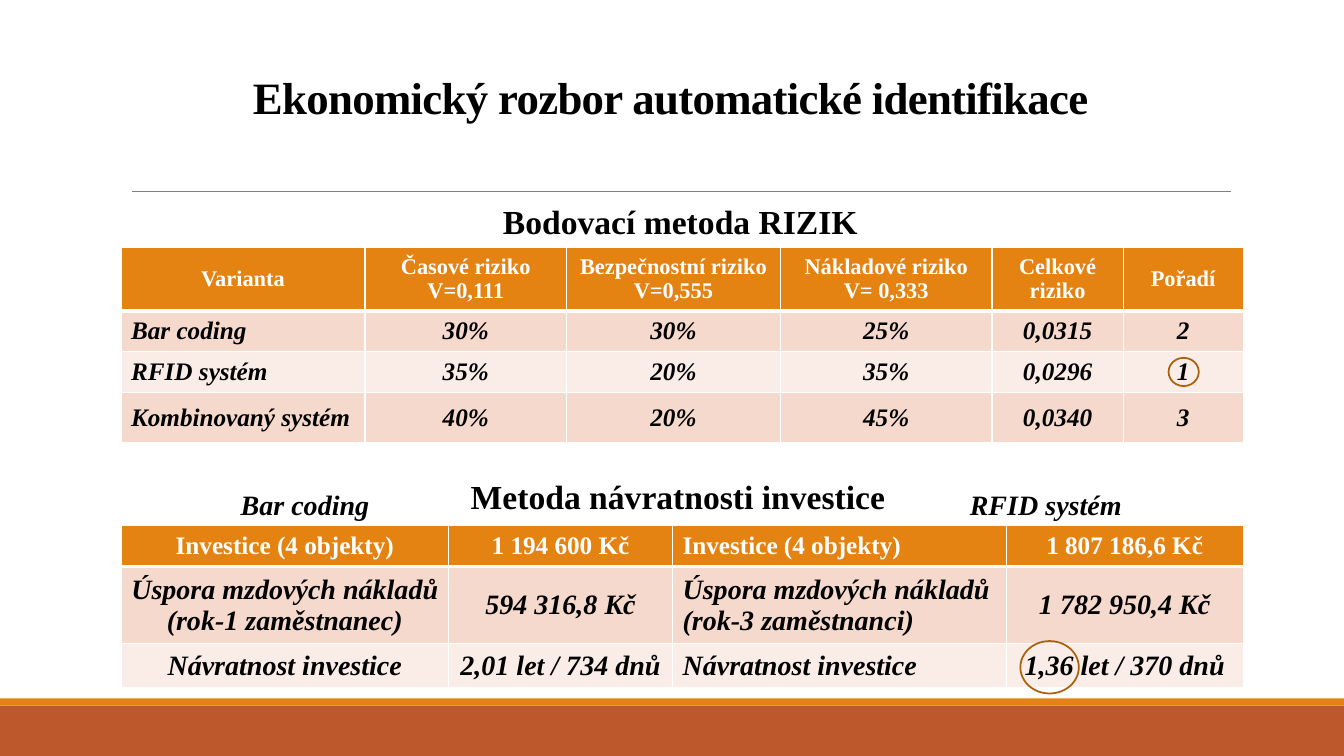
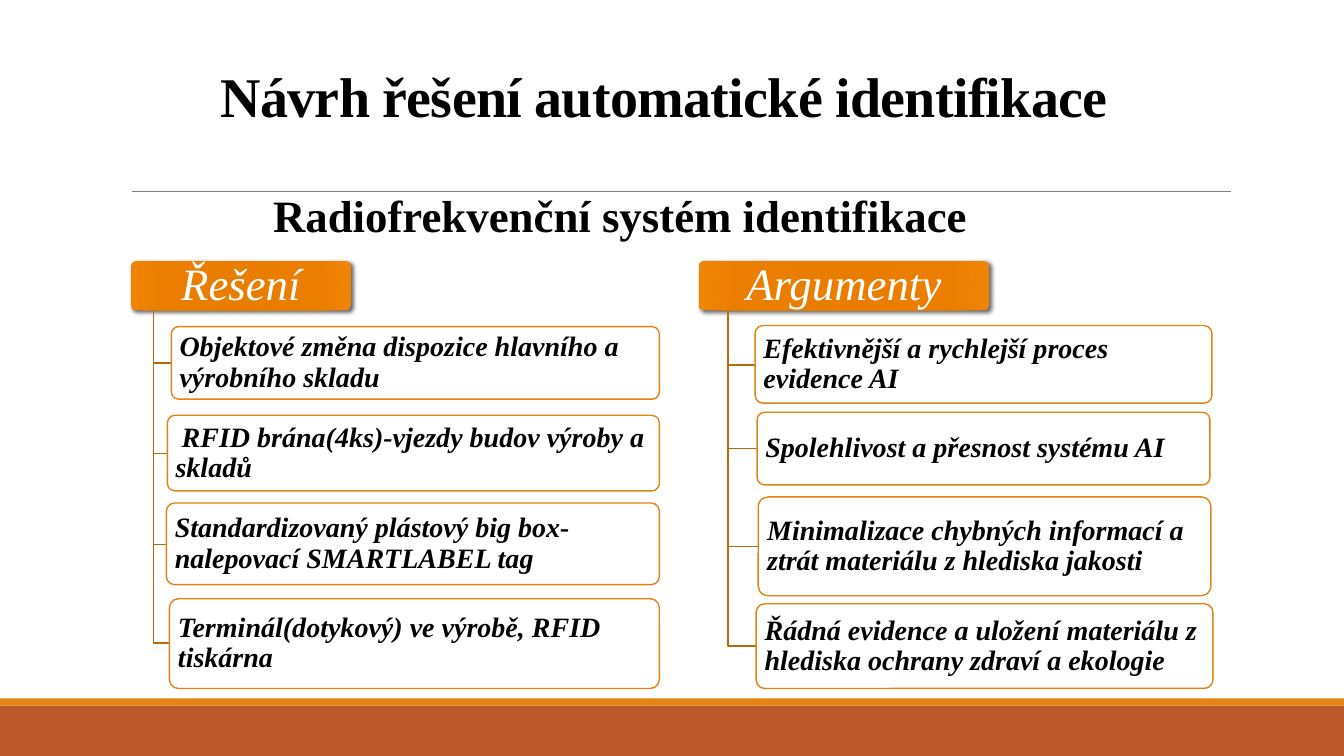
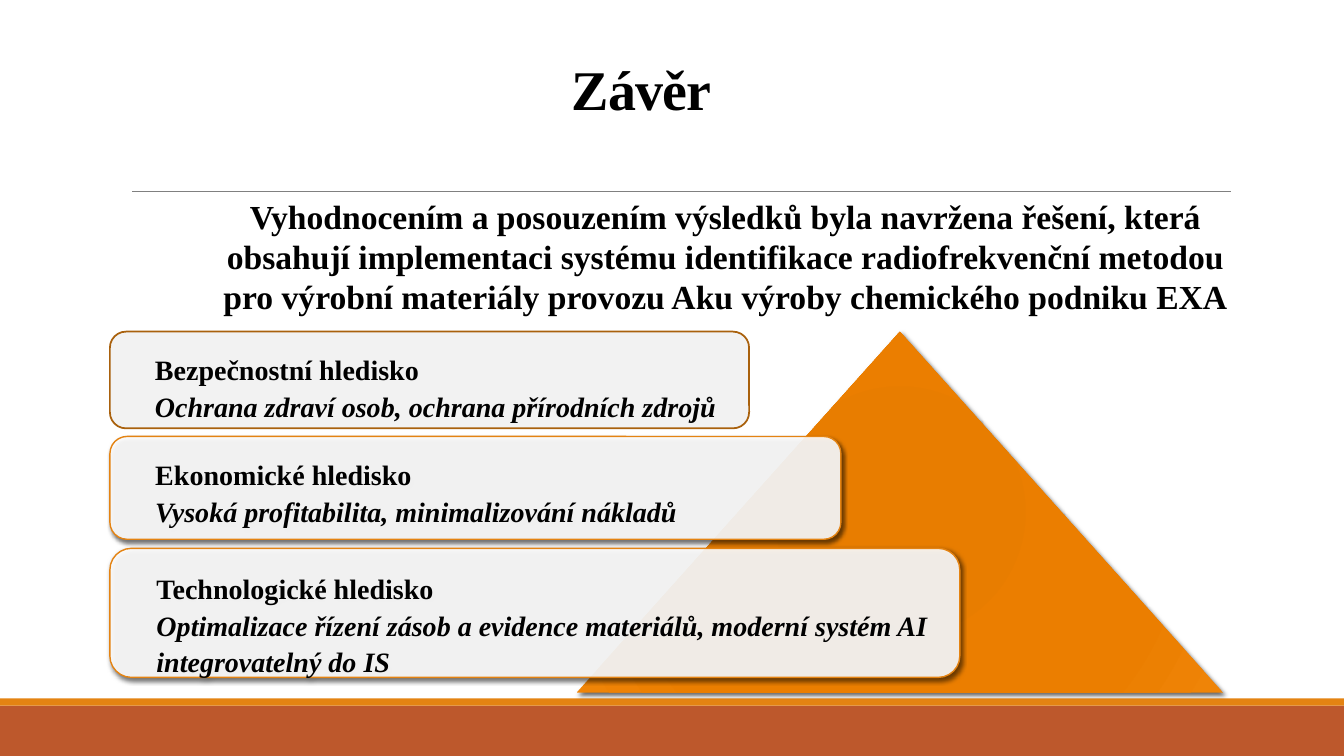
from itertools import product

from lxml import etree
from pptx import Presentation, util as u
from pptx.dml.color import RGBColor
from pptx.enum import shapes, text
from pptx.oxml.ns import qn

PX = 9144  # EMU per px, 100 px to the inch
FONT = "Times New Roman"
COLORS = {
    "rust": "BD582C", "orange": "E48312", "brown": "A9610D", "branch": "B7690E",
    "rule": "808080", "band_dark": "F5D9CC", "band_light": "FAEDE7",
    "card": "F2F2F2", "white": "FFFFFF", "black": "000000",
}
GLOW = [(0, "E57B00"), (34, "E87D00"), (70, "EB7E00"), (100, "EF8407")]
LEFT, CENTER = text.PP_ALIGN.LEFT, text.PP_ALIGN.CENTER
TOP, MIDDLE, BOTTOM = (text.MSO_ANCHOR.TOP, text.MSO_ANCHOR.MIDDLE,
                       text.MSO_ANCHOR.BOTTOM)
KIND = shapes.MSO_SHAPE
BOLD, ITALIC, BOLD_ITALIC = (True, False), (False, True), (True, True)

# ---- content -------------------------------------------------------------

RISK_TABLE = {
    "at": (120, 245), "cols": [242, 200, 212, 210, 130, 119],
    "heights": [61, 38, 41, 50], "sizes": (16, 18),
    "aligns": [LEFT] + [CENTER] * 5, "head_aligns": [CENTER] * 6,
    "rows": [
        ["Varianta", "Časové riziko\nV=0,111", "Bezpečnostní riziko\nV=0,555",
         "Nákladové riziko\nV= 0,333", "Celkové riziko", "Pořadí"],
        ["Bar coding", "30%", "30%", "25%", "0,0315", "2"],
        ["RFID systém", "35%", "20%", "35%", "0,0296", "1"],
        ["Kombinovaný systém", "40%", "20%", "45%", "0,0340", "3"],
    ],
}
PAYBACK = {"heights": [41, 76, 43], "sizes": (18, 20)}
BARCODE_TABLE = {
    **PAYBACK, "at": (120, 521), "cols": [325, 222],
    "aligns": [CENTER, CENTER], "head_aligns": [CENTER, CENTER],
    "rows": [
        ["Investice (4 objekty)", "1 194 600 Kč"],
        ["Úspora mzdových nákladů\n(rok-1 zaměstnanec)", "594 316,8 Kč"],
        ["Návratnost investice", "2,01 let / 734 dnů"],
    ],
}
RFID_TABLE = {
    **PAYBACK, "at": (667, 521), "cols": [331, 235],
    "aligns": [LEFT, CENTER], "head_aligns": [LEFT, CENTER],
    "rows": [
        ["Investice (4 objekty)", "1 807 186,6 Kč"],
        ["Úspora mzdových nákladů (rok-3 zaměstnanci)", "1 782 950,4 Kč"],
        ["Návratnost investice", "1,36 let / 370 dnů"],
    ],
}
TABLE_LABELS = [  # box, words, size, style, align
    ((489, 194, 376, 50), "Bodovací metoda RIZIK", 24, BOLD, LEFT),
    ((457, 467, 439, 50), "Metoda návratnosti investice", 24, BOLD, LEFT),
    ((192, 479, 221, 44), "Bar coding", 20, BOLD_ITALIC, CENTER),
    ((952, 479, 179, 44), "RFID systém", 20, BOLD_ITALIC, LEFT),
]
BEST_RINGS = [(1012, 636, 58, 52), (1159, 355, 30, 28)]

TREES = [  # leaves: box, first-line indent, words
    {"root": "Řešení", "box": (130, 259, 218, 49), "trunk": 152, "leaves": [
        ((170, 324, 484, 72), 0,
         "Objektové změna dispozice hlavního a výrobního skladu"),
        ((166, 412, 488, 75), 6,
         "RFID brána(4ks)-vjezdy budov výroby a skladů"),
        ((165, 499, 489, 81), 0,
         "Standardizovaný plástový big box-nalepovací SMARTLABEL tag"),
        ((168, 594, 486, 89), 0,
         "Terminál(dotykový) ve výrobě, RFID tiskárna"),
    ]},
    {"root": "Argumenty", "box": (693, 259, 288, 49), "trunk": 722, "leaves": [
        ((749, 323, 453, 77), 0, "Efektivnější a rychlejší proces evidence AI"),
        ((751, 409, 449, 72), 0, "Spolehlivost a přesnost systému AI"),
        ((752, 493, 449, 98), 0,
         "Minimalizace chybných informací a ztrát materiálu z hlediska jakosti"),
        ((750, 599, 453, 84), 0,
         "Řádná evidence a uložení materiálu z hlediska ochrany zdraví a ekologie"),
    ]},
]

SUMMARY = ("Vyhodnocením a posouzením výsledků byla navržena řešení, která "
           "obsahují implementaci systému identifikace radiofrekvenční metodou "
           "pro výrobní materiály provozu Aku výroby chemického podniku EXA")
VIEWPOINTS = [  # box, plain card, heading, detail
    ((109, 544, 843, 128), False, "Technologické hledisko",
     "Optimalizace řízení zásob a evidence materiálů, moderní systém AI "
     "integrovatelný do IS"),
    ((109, 433, 725, 102), False, "Ekonomické hledisko",
     "Vysoká profitabilita, minimalizování nákladů"),
    ((109, 329, 634, 96), True, "Bezpečnostní hledisko",
     "Ochrana zdraví osob, ochrana přírodních zdrojů"),
]

# ---- helpers -------------------------------------------------------------


def emu(*lengths):
    return [round(length * PX) for length in lengths]


def rgb(name):
    return RGBColor.from_string(COLORS[name])


def add_node(parent, tag, **attributes):
    node = etree.SubElement(parent, qn(tag))
    for key, value in attributes.items():
        node.set(key, str(value))
    return node


def write(frame, lines, size, styles=(BOLD,), color="black", align=LEFT,
          anchor=TOP, insets=(10, 5, 10, 5), spacing=None):
    """Fill a text frame; the last style serves all remaining lines."""
    frame.word_wrap = True
    frame.vertical_anchor = anchor
    (frame.margin_left, frame.margin_top,
     frame.margin_right, frame.margin_bottom) = emu(*insets)
    frame.text = "\n".join(lines)
    for index, para in enumerate(frame.paragraphs):
        para.alignment = align
        if spacing:
            para.line_spacing = spacing
        for span in para.runs:
            font = span.font
            font.name, font.size = FONT, u.Pt(size)
            font.bold, font.italic = styles[min(index, len(styles) - 1)]
            font.color.rgb = rgb(color)


def label(page, box, words, size, style=BOLD, align=LEFT, **options):
    frame = page.shapes.add_textbox(*emu(*box)).text_frame
    write(frame, [words], size, (style,), align=align, **options)
    return frame


def outline(shape, line, width):
    if line:
        shape.line.color.rgb = rgb(line)
        shape.line.width = u.Pt(width)
    else:
        shape.line.fill.background()


def add_shape(page, kind, box, fill=None, line=None, width=1, alpha=None):
    shape = page.shapes.add_shape(kind, *emu(*box))
    shape.shadow.inherit = False
    if fill:
        shape.fill.solid()
        shape.fill.fore_color.rgb = rgb(fill)
    else:
        shape.fill.background()
    if alpha:
        color = shape._element.spPr.find(qn("a:solidFill"))[0]
        add_node(color, "a:alpha", val=alpha * 1000)
    outline(shape, line, width)
    return shape


def cast_shadow(shape, blur=3):
    effects = shape._element.spPr.find(qn("a:effectLst"))
    shadow = add_node(effects, "a:outerShdw", blurRad=u.Pt(blur), dist=u.Pt(2),
                      dir=45 * 60000, rotWithShape=0)
    color = add_node(shadow, "a:srgbClr", val=COLORS["black"])
    add_node(color, "a:alpha", val=60000)


def add_glowing(page, kind, box, blur=3):
    """Add a shape with the radial orange gradient and a shadow."""
    shape = add_shape(page, kind, box, "orange")
    cast_shadow(shape, blur)
    solid = shape._element.spPr.find(qn("a:solidFill"))
    gradient = etree.Element(qn("a:gradFill"), rotWithShape="1")
    stops = add_node(gradient, "a:gsLst")
    for position, color in GLOW:
        stop = add_node(stops, "a:gs", pos=position * 1000)
        add_node(stop, "a:srgbClr", val=color)
    circle = add_node(gradient, "a:path", path="circle")
    add_node(circle, "a:fillToRect", **dict.fromkeys("ltrb", 100000))
    solid.getparent().replace(solid, gradient)
    return shape


def new_page(deck, title, box, size, align=LEFT):
    """Add a slide with the footer bands, the rule and its title."""
    page = deck.slides.add_slide(deck.slide_layouts[6])
    add_shape(page, KIND.RECTANGLE, (0, 700, 1333, 50), "rust")
    add_shape(page, KIND.RECTANGLE, (0, 693, 1333, 7), "orange")
    rule = page.shapes.add_connector(shapes.MSO_CONNECTOR.STRAIGHT,
                                     *emu(131, 190, 1221, 190))
    outline(rule, "rule", 0.5)
    add_node(rule._element.spPr, "a:effectLst")
    frame = label(page, box, title, size, align=align, anchor=BOTTOM, spacing=0.85)
    for span in frame.paragraphs[0].runs:
        span._r.get_or_add_rPr().set("spc", "-50")
    return page


def set_borders(cell, row):
    """White grid, with a thick line under the header row."""
    widths = {"L": 1, "R": 1, "T": 3 if row == 1 else 1, "B": 1 if row else 3}
    properties = cell._tc.get_or_add_tcPr()
    for index, (side, width) in enumerate(widths.items()):
        border = etree.Element(qn(f"a:ln{side}"), w=str(u.Pt(width)))
        fill = add_node(border, "a:solidFill")
        add_node(fill, "a:srgbClr", val=COLORS["white"])
        properties.insert(index, border)


def draw_table(page, data):
    rows, cols, heights = data["rows"], data["cols"], data["heights"]
    box = emu(*data["at"], sum(cols), sum(heights))
    table = page.shapes.add_table(len(rows), len(cols), *box).table
    table.horz_banding = False
    for column, width in zip(table.columns, emu(*cols)):
        column.width = width
    for table_row, height in zip(table.rows, emu(*heights)):
        table_row.height = height
    for row, col in product(range(len(rows)), range(len(cols))):
        cell = table.cell(row, col)
        head = row == 0
        write(cell.text_frame, rows[row][col].split("\n"),
              data["sizes"][0 if head else 1],
              (BOLD if head else BOLD_ITALIC,),
              "white" if head else "black",
              data["head_aligns" if head else "aligns"][col])
        cell.vertical_anchor = MIDDLE
        cell.margin_left, cell.margin_right = emu(10, 10)
        cell.margin_top, cell.margin_bottom = emu(5, 5)
        cell.fill.solid()
        band = "band_dark" if row % 2 else "band_light"
        cell.fill.fore_color.rgb = rgb("orange" if head else band)
        set_borders(cell, row)


def draw_tree(page, tree):
    """Draw a root plate with leaves hanging from its trunk line."""
    root = add_glowing(page, KIND.ROUNDED_RECTANGLE, tree["box"])
    root.adjustments[0] = 0.1
    write(root.text_frame, [tree["root"]], 32, (ITALIC,), "white", CENTER, MIDDLE,
          insets=(8, 5, 8, 5), spacing=0.9)
    trunk, start = tree["trunk"], tree["box"][1] + tree["box"][3]
    for box, indent, words in tree["leaves"]:
        left, top, _, height = box
        middle = top + height / 2
        builder = page.shapes.build_freeform(trunk, start, scale=PX)
        builder.add_line_segments([(trunk, middle), (left, middle)], close=False)
        branch = builder.convert_to_shape()
        branch.shadow.inherit = False
        branch.fill.background()
        outline(branch, "branch", 1)
        leaf = add_shape(page, KIND.ROUNDED_RECTANGLE, box, "white", "orange",
                         alpha=90)
        leaf.adjustments[0] = 0.1
        write(leaf.text_frame, [words], 20, (BOLD_ITALIC,), anchor=MIDDLE,
              insets=(6, 5, 6, 5), spacing=0.9)
        if indent:
            properties = leaf.text_frame.paragraphs[0]._p.get_or_add_pPr()
            properties.set("indent", str(indent * PX))


# ---- slides --------------------------------------------------------------


def analysis_slide(deck):
    page = new_page(deck, "Ekonomický rozbor automatické identifikace",
                    (241, 62, 852, 66), 32)
    for table in (RISK_TABLE, BARCODE_TABLE, RFID_TABLE):
        draw_table(page, table)
    for entry in TABLE_LABELS:
        label(page, *entry)
    for box in BEST_RINGS:
        add_shape(page, KIND.OVAL, box, line="brown", width=1.25)


def proposal_slide(deck):
    page = new_page(deck, "Návrh řešení automatické identifikace",
                    (209, 60, 915, 73), 40)
    for tree in TREES:
        draw_tree(page, tree)
    label(page, (261, 181, 811, 64), "Radiofrekvenční systém identifikace", 32)


def conclusion_slide(deck):
    page = new_page(deck, "Závěr", (183, 46, 907, 80), 40, CENTER)
    add_glowing(page, KIND.ISOSCELES_TRIANGLE, (572, 329, 641, 358), blur=3.5)
    label(page, (190, 189, 1059, 131), SUMMARY, 24, align=CENTER)
    for box, plain, heading, detail in VIEWPOINTS:
        if plain:
            card = add_shape(page, KIND.ROUNDED_RECTANGLE, box, "card", "brown", 1.25)
        else:
            card = add_shape(page, KIND.ROUNDED_RECTANGLE, box, "white", "orange",
                             alpha=90)
            cast_shadow(card)
        write(card.text_frame, [heading, detail], 20, (BOLD, BOLD_ITALIC),
              insets=(40, 13, 10, 5), spacing=1.1)


def main():
    deck = Presentation()
    deck.slide_width, deck.slide_height = emu(1333, 750)
    analysis_slide(deck)
    proposal_slide(deck)
    conclusion_slide(deck)
    deck.save("out.pptx")


if __name__ == "__main__":
    main()
